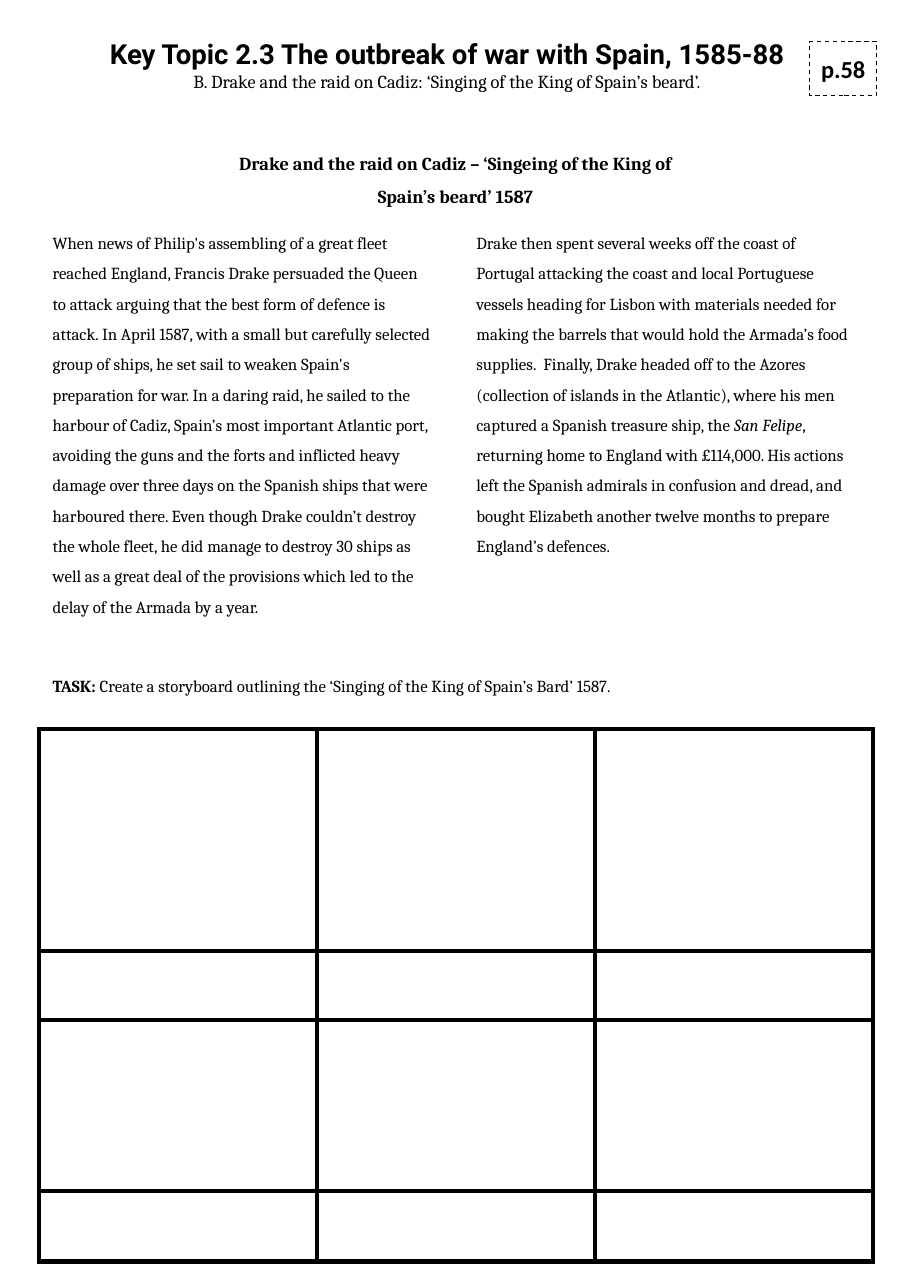
from lxml import etree
from pptx import Presentation
from pptx.dml.color import RGBColor
from pptx.enum.dml import MSO_LINE
from pptx.enum.shapes import MSO_SHAPE
from pptx.enum.text import MSO_ANCHOR, MSO_AUTO_SIZE, PP_ALIGN
from pptx.oxml.ns import qn
from pptx.util import Inches, Pt

LEFT, CENTER = PP_ALIGN.LEFT, PP_ALIGN.CENTER
TOP, MIDDLE = MSO_ANCHOR.TOP, MSO_ANCHOR.MIDDLE
BLACK, WHITE = "000000", "FFFFFF"
TITLE_ONLY = 5

TITLE = "Key Topic 2.3 The outbreak of war with Spain, 1585-88"
SUBTITLE = "B. Drake and the raid on Cadiz: ‘Singing of the King of Spain’s beard’."
PAGE_REFERENCE = "p.58"
HEADING = "Drake and the raid on Cadiz – ‘Singeing of the King of Spain’s beard’ 1587"
RAID = (
    "When news of Philip's assembling of a great fleet reached England, Francis Drake "
    "persuaded the Queen to attack arguing that the best form of defence is attack. "
    "In April 1587, with a small but carefully selected group of ships, he set sail to "
    "weaken Spain's preparation for war. In a daring raid, he sailed to the harbour of "
    "Cadiz, Spain’s most important Atlantic port, avoiding the guns and the forts and "
    "inflicted heavy damage over three days on the Spanish ships that were harboured "
    "there. Even though Drake couldn’t destroy the whole fleet, he did manage to destroy "
    "30 ships as well as a great deal of the provisions which led to the delay of the "
    "Armada by a year."
)
AFTERMATH = (
    "Drake then spent several weeks off the coast of Portugal attacking the coast and "
    "local Portuguese vessels heading for Lisbon with materials needed for making the "
    "barrels that would hold the Armada’s food supplies.  Finally, Drake headed off to "
    "the Azores (collection of islands in the Atlantic), where his men captured a "
    "Spanish treasure ship, the "
)
SHIP = "San Felipe"
RETURN = (
    ", returning home to England with £114,000. His actions left the Spanish admirals "
    "in confusion and dread, and bought Elizabeth another twelve months to prepare "
    "England’s defences."
)
TASK_LABEL = "TASK: "
TASK = "Create a storyboard outlining the ‘Singing of the King of Spain’s Bard’ 1587."
STORYBOARD_ROWS = [2.01, 0.63, 1.55, 0.64]
STORYBOARD_COLUMNS = 3
STORYBOARD_WIDTH = 7.58


def color(value):
    return RGBColor.from_string(value)


def set_frame(frame, anchor, inset=0.05):
    frame.word_wrap = True
    frame.auto_size = MSO_AUTO_SIZE.NONE
    frame.vertical_anchor = anchor
    frame.margin_left = frame.margin_right = Inches(0.1)
    frame.margin_top = frame.margin_bottom = Inches(inset)


def write(para, spans, size, font="Cambria", bold=None, align=LEFT, spacing=1.5):
    for text in spans:
        para.add_run().text = text
    para.alignment = align
    para.line_spacing = spacing
    para.font.size = Pt(size)
    para.font.name = font
    para.font.bold = bold
    para.font.color.rgb = color(BLACK)


def add_text(page, left, top, width, height):
    box = page.shapes.add_textbox(*map(Inches, (left, top, width, height)))
    set_frame(box.text_frame, TOP)
    return box.text_frame


def add_title(page):
    title = page.shapes.title
    title.left, title.top = Inches(0.77), Inches(0.25)
    title.width, title.height = Inches(6.58), Inches(0.67)
    frame = title.text_frame
    set_frame(frame, MIDDLE, 0.1)
    write(frame.paragraphs[0], [TITLE], 18, "Roboto", True, CENTER, 1.0)
    write(frame.add_paragraph(), [SUBTITLE], 12, bold=False, align=CENTER, spacing=1.0)


def add_page_reference(page):
    box = page.shapes.add_shape(MSO_SHAPE.RECTANGLE, *map(Inches, (7.35, 0.38, 0.61, 0.49)))
    box.shadow.inherit = False
    box.fill.solid()
    box.fill.fore_color.rgb = color(WHITE)
    box.line.color.rgb = color(BLACK)
    box.line.width = Pt(0.75)
    box.line.dash_style = MSO_LINE.DASH
    set_frame(box.text_frame, MIDDLE, 0.1)
    write(box.text_frame.paragraphs[0], [PAGE_REFERENCE], 16, "Calibri", True, CENTER, 1.0)


def add_story(page):
    frame = add_text(page, 0.38, 1.97, 7.5, 3.95)
    body = frame._txBody.bodyPr
    body.set("numCol", "2")
    body.set("spcCol", str(Inches(0.39)))
    write(frame.paragraphs[0], [RAID], 11)
    frame.paragraphs[0].space_after = Pt(19)
    aftermath = frame.add_paragraph()
    write(aftermath, [AFTERMATH, SHIP, RETURN], 11)
    aftermath.runs[1].font.italic = True


def add_border(cell, side):
    line = etree.SubElement(cell._tc.get_or_add_tcPr(), qn(f"a:{side}"), w=str(Pt(3)))
    fill = etree.SubElement(line, qn("a:solidFill"))
    etree.SubElement(fill, qn("a:srgbClr"), val=BLACK)


def add_storyboard(page):
    table = page.shapes.add_table(
        len(STORYBOARD_ROWS), STORYBOARD_COLUMNS, Inches(0.35), Inches(6.62),
        Inches(STORYBOARD_WIDTH), Inches(sum(STORYBOARD_ROWS)),
    ).table
    table.first_row = table.horz_banding = False
    for column in table.columns:
        column.width = Inches(STORYBOARD_WIDTH / STORYBOARD_COLUMNS)
    for row, height in zip(table.rows, STORYBOARD_ROWS):
        row.height = Inches(height)
    for cell in table.iter_cells():
        for side in ("lnL", "lnR", "lnT", "lnB"):
            add_border(cell, side)
        cell.fill.background()


def main():
    deck = Presentation()
    deck.slide_width, deck.slide_height = Inches(8.27), Inches(11.69)
    page = deck.slides.add_slide(deck.slide_layouts[TITLE_ONLY])

    add_page_reference(page)
    add_title(page)
    task = add_text(page, 0.38, 5.99, 7.53, 0.34).paragraphs[0]
    write(task, [TASK_LABEL, TASK], 11)
    task.runs[0].font.bold = True
    add_story(page)
    heading = add_text(page, 2.07, 1.23, 4.13, 0.67).paragraphs[0]
    write(heading, [HEADING], 12, bold=True, align=CENTER)
    add_storyboard(page)

    deck.save("out.pptx")


if __name__ == "__main__":
    main()
